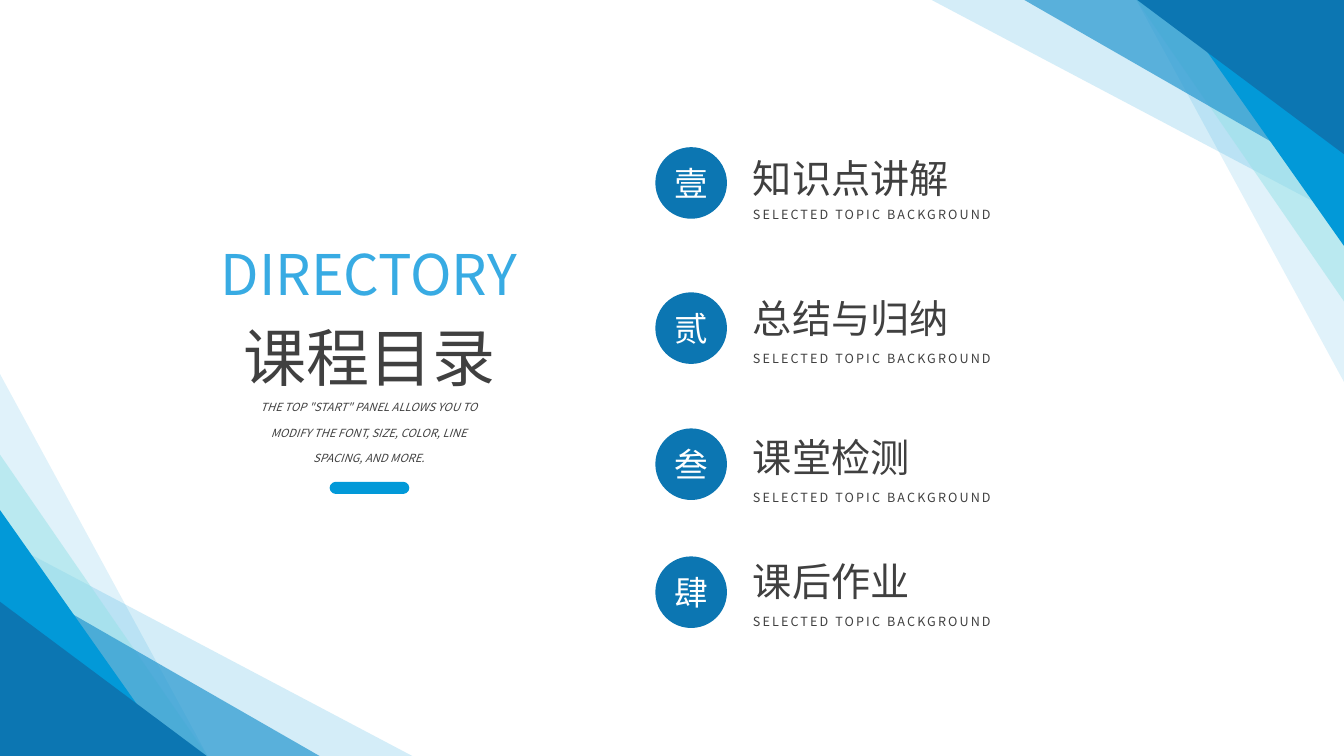
from lxml.etree import SubElement
from pptx import Presentation
from pptx.dml.color import RGBColor
from pptx.enum.shapes import MSO_SHAPE
from pptx.enum.text import MSO_AUTO_SIZE, PP_ALIGN
from pptx.oxml.ns import qn
from pptx.util import Inches, Pt

FONT = "Noto Sans CJK SC"
NAVY, BLUE, SKY, MID, MINT = "0C76B2", "0299D8", "38ABE3", "2094CE", "95E1E7"
GREY, WHITE = "404040", "FFFFFF"

presentation = Presentation()
presentation.slide_width = Inches(13.333)
presentation.slide_height = Inches(7.5)
slide = presentation.slides.add_slide(presentation.slide_layouts[6])
# All lengths below are percentages of the slide's width and height.
COLUMN = presentation.slide_width / 100
ROW = presentation.slide_height / 100


def add_solid(preset, left, top, width, height, color, opacity=100):
    """Add a borderless filled shape, with opacity in percent."""
    shape = slide.shapes.add_shape(preset, round(left * COLUMN), round(top * ROW),
                                   round(width * COLUMN), round(height * ROW))
    shape.shadow.inherit = False
    shape.line.fill.background()
    shape.fill.solid()
    shape.fill.fore_color.rgb = RGBColor.from_string(color)
    if opacity < 100:
        color_element = shape._element.spPr.find(qn("a:solidFill"))[0]
        SubElement(color_element, qn("a:alpha")).set("val", str(opacity * 1000))
    return shape


def add_text(text, left, top, width, height, size, color=GREY, align=PP_ALIGN.LEFT,
             italic=None, line_spacing=None, letter_spacing=None):
    box = slide.shapes.add_textbox(round(left * COLUMN), round(top * ROW),
                                   round(width * COLUMN), round(height * ROW))
    frame = box.text_frame
    frame.word_wrap = True
    frame.auto_size = MSO_AUTO_SIZE.SHAPE_TO_FIT_TEXT
    paragraph = frame.paragraphs[0]
    paragraph.alignment = align
    paragraph.line_spacing = line_spacing
    run = paragraph.add_run()
    run.text = text
    run.font.name = FONT
    run.font.size = Pt(size)
    run.font.italic = italic
    run.font.color.rgb = RGBColor.from_string(color)
    properties = run._r.get_or_add_rPr()
    SubElement(properties, qn("a:ea")).set("typeface", FONT)
    if letter_spacing:
        properties.set("spc", str(round(letter_spacing * 100)))


# Layered triangles: bottom-left corner, then turned round in the top-right one
triangles = [
    (15.45, 50.53, BLUE, 12),
    (30.68, 28.8, BLUE, 17),
    (15.45, 39.87, MINT, 50),
    (23.78, 24.27, MID, 68),
    (12.9, 32.53, BLUE, 100),
    (15.38, 20.4, NAVY, 100),
]
for turned in (False, True):
    for width, height, color, opacity in triangles:
        left, top = (100 - width, 0) if turned else (0, 100 - height)
        triangle = add_solid(MSO_SHAPE.RIGHT_TRIANGLE, left, top, width, height, color, opacity)
        triangle.rotation = 180 if turned else 0

# Heading on the left
add_text("DIRECTORY", 14.85, 31.07, 25.21, 10.27, 40, SKY, PP_ALIGN.CENTER)
add_text("课程目录", 15.98, 41.47, 22.96, 11.47, 45, align=PP_ALIGN.CENTER)
add_text('THE TOP "START" PANEL ALLOWS YOU TO MODIFY THE FONT, SIZE, COLOR, '
         "LINE SPACING, AND MORE.", 17.93, 50.8, 19.05, 11.47, 8,
         align=PP_ALIGN.CENTER, italic=True, line_spacing=Pt(18))
bar = add_solid(MSO_SHAPE.ROUNDED_RECTANGLE, 24.53, 63.73, 5.93, 1.6, BLUE)
bar.adjustments[0] = 0.5

# Contents: numeral, title, then the tops of circle, title and caption
topics = [
    ("壹", "知识点讲解", 19.47, 19.73, 26.67),
    ("贰", "总结与归纳", 38.67, 38.27, 45.73),
    ("叁", "课堂检测", 56.67, 56.67, 64.13),
    ("肆", "课后作业", 73.6, 73.07, 80.53),
]
for numeral, title, circle_top, title_top, caption_top in topics:
    add_solid(MSO_SHAPE.OVAL, 48.76, circle_top, 5.33, 9.47, NAVY)
    add_text(numeral, 49.36, circle_top + 1.4, 4.13, 6.67, 24, WHITE, PP_ALIGN.CENTER)
    add_text(title, 55.29, title_top, 20.78, 7.6, 28)
    add_text("SELECTED TOPIC BACKGROUND", 55.29, caption_top, 27.08, 3.33, 9,
             letter_spacing=1.5)

presentation.save("out.pptx")
